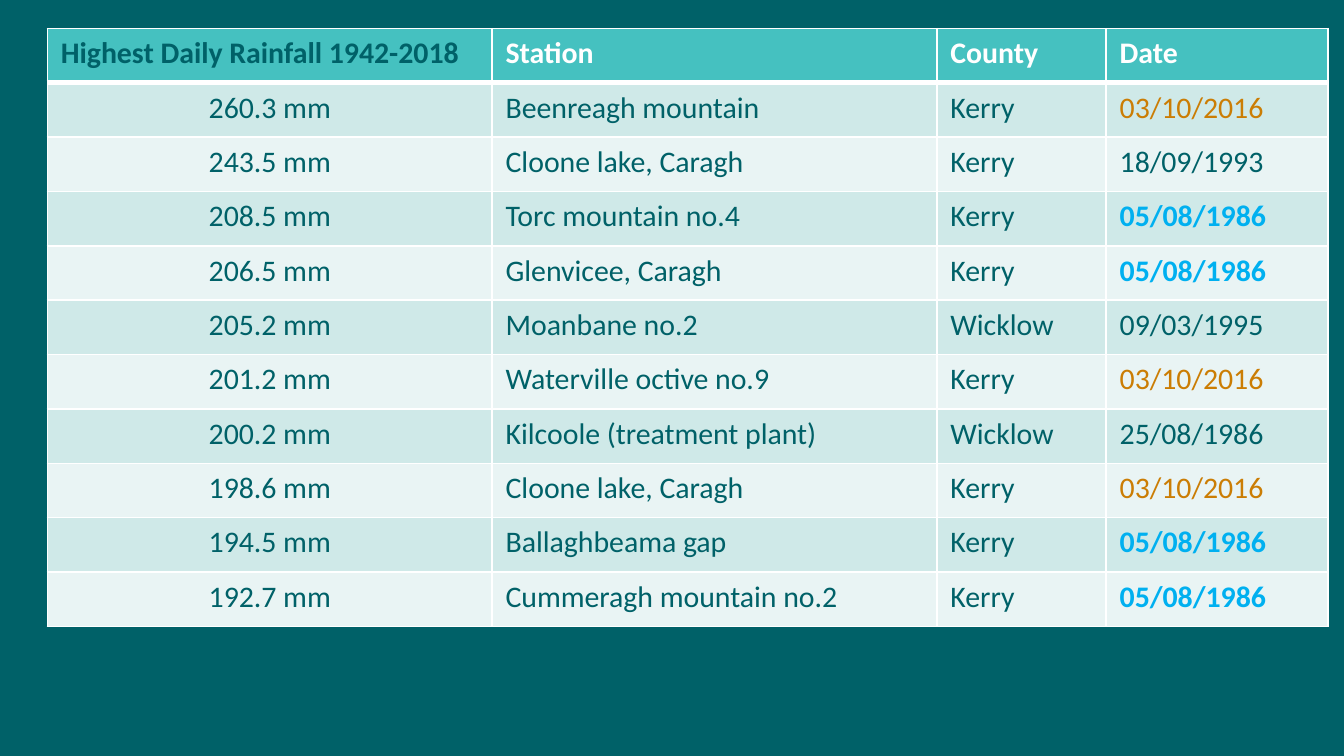
import pptx
import pptx.dml.color
import pptx.enum.text
import pptx.oxml
import pptx.oxml.ns
import pptx.util

Pt = pptx.util.Pt


class Theme:
    font = "Calibri"
    size = 16
    deep = "006168"
    teal = "45C1C0"
    bands = ("CFE9E8", "E9F4F4")
    white = "FFFFFF"
    amber = "CB7D04"
    blue = "00B0F0"
    thin = 1
    thick = 3


def paint(fill, tint):
    fill.solid()
    fill.fore_color.rgb = pptx.dml.color.RGBColor.from_string(tint)


def edge(cell, side, width):
    line = pptx.oxml.parse_xml(
        f'<a:{side} {pptx.oxml.ns.nsdecls("a")} w="{Pt(width)}">'
        f'<a:solidFill><a:srgbClr val="{Theme.white}"/></a:solidFill></a:{side}>'
    )
    cell._tc.get_or_add_tcPr().append(line)


# Rainfall records
heads = ("Highest Daily Rainfall 1942-2018", "Station", "County", "Date")
data = (
    ("260.3 mm", "Beenreagh mountain", "Kerry", "03/10/2016"),
    ("243.5 mm", "Cloone lake, Caragh", "Kerry", "18/09/1993"),
    ("208.5 mm", "Torc mountain no.4", "Kerry", "05/08/1986"),
    ("206.5 mm", "Glenvicee, Caragh", "Kerry", "05/08/1986"),
    ("205.2 mm", "Moanbane no.2", "Wicklow", "09/03/1995"),
    ("201.2 mm", "Waterville octive no.9", "Kerry", "03/10/2016"),
    ("200.2 mm", "Kilcoole (treatment plant)", "Wicklow", "25/08/1986"),
    ("198.6 mm", "Cloone lake, Caragh", "Kerry", "03/10/2016"),
    ("194.5 mm", "Ballaghbeama gap", "Kerry", "05/08/1986"),
    ("192.7 mm", "Cummeragh mountain no.2", "Kerry", "05/08/1986"),
)
rows = (heads, *data)
widths = (238.3, 238.3, 90.7, 118.8)
height = 29.13

# Storm dates that recur: colour and weight
storms = {"03/10/2016": (Theme.amber, False), "05/08/1986": (Theme.blue, True)}

# Slide and background
deck = pptx.Presentation()
deck.slide_width, deck.slide_height = Pt(720), Pt(405)
slide = deck.slides.add_slide(deck.slide_layouts[6])
paint(slide.background.fill, Theme.deep)

# Table grid
grid = slide.shapes.add_table(
    len(rows), len(widths), Pt(25.4), Pt(15.3), Pt(sum(widths)), Pt(height * len(rows))
).table
for col, width in zip(grid.columns, widths):
    col.width = Pt(width)
for row in grid.rows:
    row.height = Pt(height)

# Cells
for r, row in enumerate(rows):
    for c, text in enumerate(row):
        cell = grid.cell(r, c)

        # Borders, with a thick rule under the header
        for side in ("lnL", "lnR", "lnT", "lnB"):
            rule = (r, side) in ((0, "lnB"), (1, "lnT"))
            edge(cell, side, Theme.thick if rule else Theme.thin)

        # Fill and text style
        if r == 0:
            paint(cell.fill, Theme.teal)
            tint, bold = (Theme.white if c else Theme.deep), True
        else:
            paint(cell.fill, Theme.bands[(r - 1) % 2])
            tint, bold = storms.get(text, (Theme.deep, False))

        # Text
        para = cell.text_frame.paragraphs[0]
        para.text = text
        if r and c == 0:
            para.alignment = pptx.enum.text.PP_ALIGN.CENTER
        font = para.runs[0].font
        font.name, font.size, font.bold = Theme.font, Pt(Theme.size), bold
        paint(font.fill, tint)

deck.save("out.pptx")
